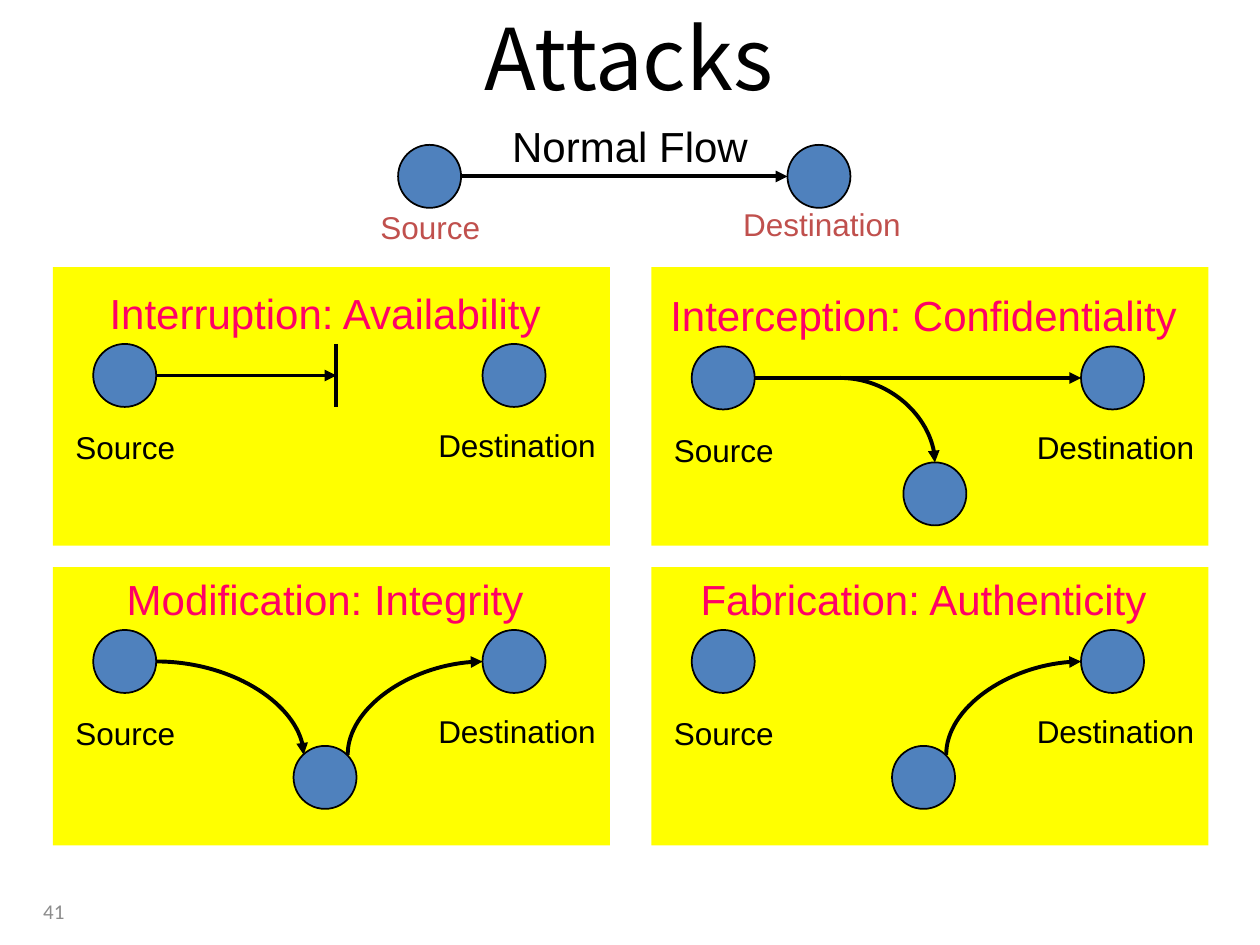
"""Build a slide that contrasts normal message flow with four kinds of attack."""
from lxml.etree import SubElement
from pptx import Presentation
from pptx.dml.color import RGBColor
from pptx.enum.shapes import MSO_CONNECTOR, MSO_SHAPE
from pptx.enum.text import MSO_ANCHOR, PP_ALIGN
from pptx.oxml.ns import qn
from pptx.util import Inches, Pt

BLACK = RGBColor(0x00, 0x00, 0x00)
GRAY = RGBColor(0x8C, 0x8C, 0x8C)
YELLOW = RGBColor(0xFF, 0xFF, 0x00)
BLUE = RGBColor(0x4F, 0x81, 0xBD)
RED = RGBColor(0xC0, 0x50, 0x4D)
PINK = RGBColor(0xFF, 0x00, 0x66)

NODE = 0.5
SPAN = 3.09
MIDDLE = NODE / 2
PANEL_COLUMNS, PANEL_ROWS = (0.42, 5.17), (2.12, 4.5)
PANEL_SIZE = (4.42, 2.21)
SOURCE_INSET = 0.32

STRAIGHT = ("straight", (NODE, MIDDLE), (SPAN, MIDDLE))
FORGED = ("rising", (2.02, 0.99), (SPAN, MIDDLE))

ATTACKS = [
    {"caption": "Interruption: Availability", "width": 3.65, "cell": (0, 0), "top": 2.73,
     "lines": [("straight", (NODE, MIDDLE), (1.93, MIDDLE)), ("bar", (1.93, 0), (1.93, NODE))]},
    {"caption": "Interception: Confidentiality", "width": 4.22, "cell": (1, 0), "top": 2.75,
     "attacker": 1.68, "lines": [STRAIGHT, ("falling", (1.18, MIDDLE), (1.93, 0.92))]},
    {"caption": "Modification: Integrity", "width": 3.35, "cell": (0, 1), "top": 5,
     "attacker": 1.59, "lines": [("falling", (NODE, MIDDLE), (1.67, 0.99)), FORGED]},
    {"caption": "Fabrication: Authenticity", "width": 3.76, "cell": (1, 1), "top": 5,
     "attacker": 1.59, "lines": [FORGED]},
]

deck = Presentation()
deck.slide_width, deck.slide_height = Inches(10), Inches(7.5)
page = deck.slides.add_slide(deck.slide_layouts[6])


def add_text(text, left, top, width, height, *, size, color=BLACK, font="Arial",
             align=PP_ALIGN.LEFT, anchor=MSO_ANCHOR.TOP, wrap=False):
    box = page.shapes.add_textbox(*map(Inches, (left, top, width, height)))
    frame = box.text_frame
    frame.word_wrap = wrap
    frame.vertical_anchor = anchor
    para = frame.paragraphs[0]
    para.alignment = align
    span = para.add_run()
    span.text = text
    span.font.size, span.font.name = Pt(size), font
    span.font.color.rgb = color


def add_filled(kind, left, top, width, height, color, outlined=False):
    shape = page.shapes.add_shape(kind, *map(Inches, (left, top, width, height)))
    shape.shadow.inherit = False
    shape.fill.solid()
    shape.fill.fore_color.rgb = color
    if outlined:
        shape.line.color.rgb, shape.line.width = BLACK, Pt(1)
    else:
        shape.line.fill.background()


def add_node(left, top):
    add_filled(MSO_SHAPE.OVAL, left, top, NODE, NODE, BLUE, outlined=True)


def add_line(kind, x1, y1, x2, y2):
    curved = kind in ("falling", "rising")
    if kind == "rising":
        center_x, center_y = (x1 + x2) / 2, (y1 + y2) / 2
        half_width, half_height = (y1 - y2) / 2, (x2 - x1) / 2
        x1, x2 = center_x - half_width, center_x + half_width
        y1, y2 = center_y - half_height, center_y + half_height
    style = MSO_CONNECTOR.CURVE if curved else MSO_CONNECTOR.STRAIGHT
    line = page.shapes.add_connector(style, *map(Inches, (x1, y1, x2, y2)))
    line.line.color.rgb, line.line.width = BLACK, Pt(2.25)
    properties = line._element.spPr
    if curved:
        properties.find(qn("a:prstGeom")).set("prst", "curvedConnector2")
    if kind == "rising":
        properties.find(qn("a:xfrm")).set("rot", str(270 * 60000))
    if kind != "bar":
        SubElement(properties.find(qn("a:ln")), qn("a:tailEnd"), type="triangle")
    SubElement(properties, qn("a:effectLst"))


def add_flow(left, top, caption, width, lines, *, caption_rise=0.5, caption_color=PINK,
             label_drop=0.6, label_color=BLACK, attacker=None):
    for offset in (0, SPAN):
        add_node(left + offset, top)
    if attacker is not None:
        add_node(left + attacker, top + 0.92)
    for kind, start, end in lines:
        add_line(kind, left + start[0], top + start[1], left + end[0], top + end[1])
    add_text("Source", left - 0.24, top + label_drop + 0.02, 0.99, 0.4,
             size=18, color=label_color)
    add_text("Destination", left + 2.64, top + label_drop, 1.45, 0.4,
             size=18, color=label_color)
    add_text(caption, left + 1.84 - width / 2, top - caption_rise, width, 0.5,
             size=24, color=caption_color, align=PP_ALIGN.CENTER)


add_text("Attacks", 0.17, 0.01, 9.64, 0.88, size=48.6, font="Noto Sans CJK KR",
         align=PP_ALIGN.CENTER, anchor=MSO_ANCHOR.MIDDLE, wrap=True)
add_text("41", 0.17, 7.03, 0.44, 0.4, size=12, color=GRAY, font="Calibri",
         align=PP_ALIGN.RIGHT, anchor=MSO_ANCHOR.MIDDLE, wrap=True)
add_flow(3.16, 1.15, "Normal Flow", 2.07, [STRAIGHT], caption_rise=0.24,
         caption_color=BLACK, label_drop=0.43, label_color=RED)
for attack in ATTACKS:
    column, row = attack["cell"]
    panel_left = PANEL_COLUMNS[column]
    add_filled(MSO_SHAPE.RECTANGLE, panel_left, PANEL_ROWS[row], *PANEL_SIZE, YELLOW)
    add_flow(panel_left + SOURCE_INSET, attack["top"], attack["caption"], attack["width"],
             attack["lines"], attacker=attack.get("attacker"))

deck.save("out.pptx")
